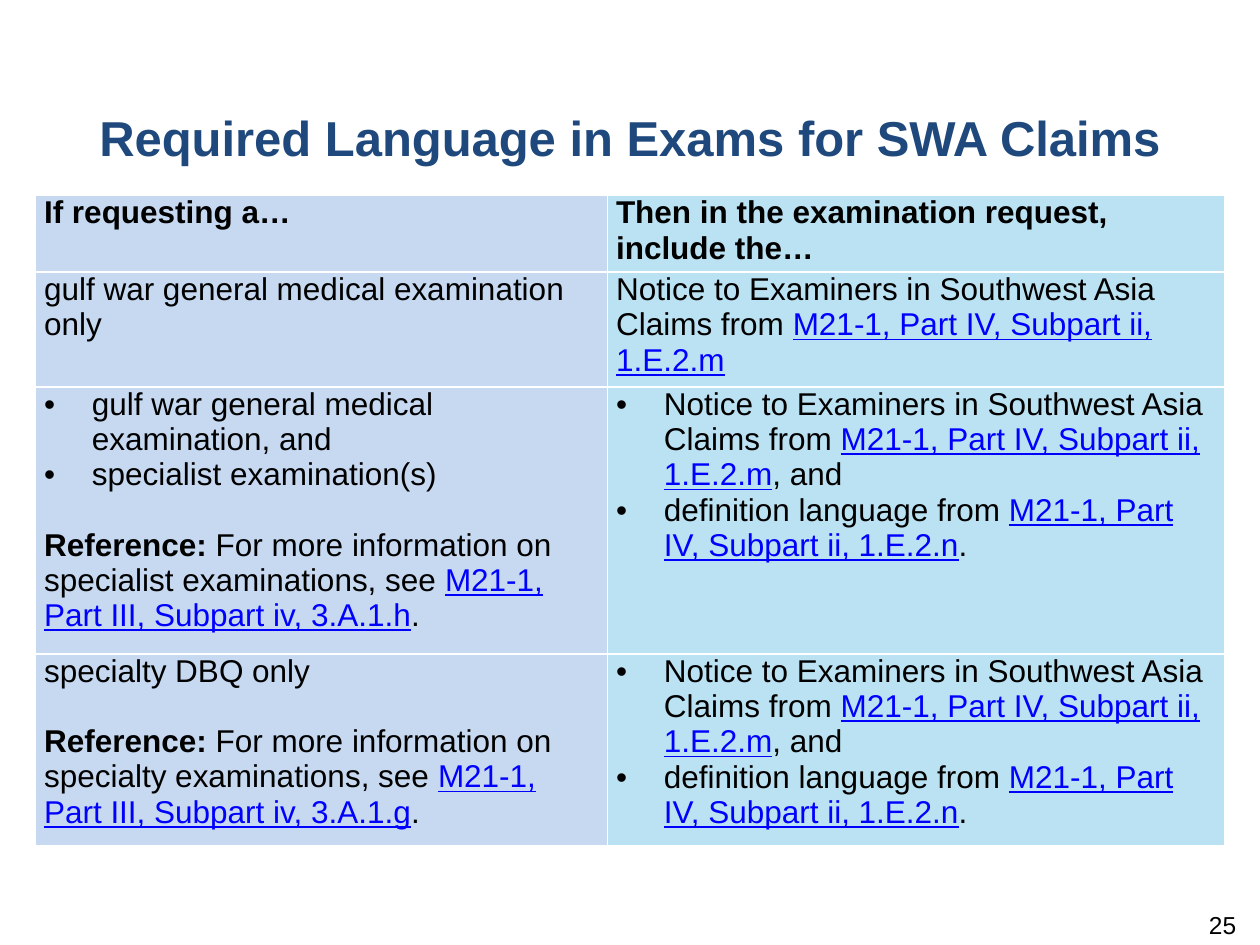
from lxml import etree
from pptx import Presentation
from pptx.dml.color import RGBColor
from pptx.enum.text import MSO_ANCHOR, PP_ALIGN
from pptx.oxml.ns import qn
from pptx.util import Inches, Pt

CENTER, RIGHT = PP_ALIGN.CENTER, PP_ALIGN.RIGHT
TOP, MIDDLE = MSO_ANCHOR.TOP, MSO_ANCHOR.MIDDLE
NAVY = RGBColor(0x1F, 0x49, 0x7D)
BLACK = RGBColor(0, 0, 0)
LINK_BLUE = RGBColor(0, 0, 0xFF)
COLUMN_FILLS = (RGBColor(0xC6, 0xD9, 0xF1), RGBColor(0xBB, 0xE2, 0xF2))
FONT = "Arial"
COLUMN_WIDTHS = (4.54, 4.9)
ROW_HEIGHTS = (0.61, 0.91, 2.12, 1.52)
PLAIN, BOLD, LINK = "plain", "bold", "link"
LINE_GAP = 20

NOTICE = [
    ("Notice to Examiners in Southwest Asia Claims from ", PLAIN),
    ("M21-1, Part IV, Subpart ii, 1.E.2.m", LINK),
]


def paragraph(*spans, bullet=False, before=0):
    return {"spans": spans, "bullet": bullet, "before": before}


def reference(topic, section):
    return paragraph(
        ("Reference: ", BOLD),
        (f"For more information on {topic} examinations, see ", PLAIN),
        (f"M21-1, Part III, Subpart iv, {section}", LINK),
        (".", PLAIN),
        before=LINE_GAP,
    )


def notice_and_definition():
    return [
        paragraph(*NOTICE, (", and", PLAIN), bullet=True),
        paragraph(
            ("definition language from ", PLAIN),
            ("M21-1, Part IV, Subpart ii, 1.E.2.n", LINK),
            (".", PLAIN),
            bullet=True,
        ),
    ]


ROWS = [
    (
        [paragraph(("If requesting a…", BOLD))],
        [paragraph(("Then in the examination request, include the…", BOLD))],
    ),
    (
        [paragraph(("gulf war general medical examination only", PLAIN))],
        [paragraph(*NOTICE)],
    ),
    (
        [
            paragraph(("gulf war general medical examination, and", PLAIN), bullet=True),
            paragraph(("specialist examination(s)", PLAIN), bullet=True),
            reference("specialist", "3.A.1.h"),
        ],
        notice_and_definition(),
    ),
    (
        [
            paragraph(("specialty DBQ only", PLAIN)),
            reference("specialty", "3.A.1.g"),
        ],
        notice_and_definition(),
    ),
]


def add_bullet(para):
    properties = para._p.get_or_add_pPr()
    properties.set("marL", str(Inches(0.38)))
    properties.set("indent", str(-Inches(0.38)))
    etree.SubElement(properties, qn("a:buFont"), typeface=FONT)
    etree.SubElement(properties, qn("a:buChar"), char="•")


def style_font(font, size, color, bold=False):
    font.name = FONT
    font.size = Pt(size)
    font.color.rgb = color
    font.bold = bold


def fill_cell(cell, color, content):
    cell.fill.solid()
    cell.fill.fore_color.rgb = color
    cell.margin_left = cell.margin_right = Inches(0.07)
    cell.margin_top = cell.margin_bottom = 0
    frame = cell.text_frame
    for index, item in enumerate(content):
        para = frame.add_paragraph() if index else frame.paragraphs[0]
        if item["bullet"]:
            add_bullet(para)
        if item["before"]:
            para.space_before = Pt(item["before"])
        for text, style in item["spans"]:
            span = para.add_run()
            span.text = text
            is_link = style == LINK
            style_font(span.font, 18, LINK_BLUE if is_link else BLACK, style == BOLD)
            span.font.underline = is_link


def add_label(page, left, top, width, height, text, size, color, bold, align, anchor):
    box = page.shapes.add_textbox(Inches(left), Inches(top), Inches(width), Inches(height))
    frame = box.text_frame
    frame.word_wrap = True
    frame.vertical_anchor = anchor
    frame.margin_top = 0
    frame.margin_bottom = 0
    para = frame.paragraphs[0]
    para.text = text
    para.alignment = align
    style_font(para.font, size, color, bold)


def add_request_table(page, left, top):
    table = page.shapes.add_table(
        len(ROWS), len(COLUMN_WIDTHS), Inches(left), Inches(top),
        Inches(sum(COLUMN_WIDTHS)), Inches(sum(ROW_HEIGHTS)),
    ).table
    for column, width in zip(table.columns, COLUMN_WIDTHS):
        column.width = Inches(width)
    for row, height, contents in zip(table.rows, ROW_HEIGHTS, ROWS):
        row.height = Inches(height)
        for cell, color, content in zip(row.cells, COLUMN_FILLS, contents):
            fill_cell(cell, color, content)


def main():
    deck = Presentation()
    deck.slide_width = Inches(10)
    deck.slide_height = Inches(7.5)
    page = deck.slides.add_slide(deck.slide_layouts[6])
    add_label(page, 0, 0.76, 10, 0.66, "Required Language in Exams for SWA Claims",
              28, NAVY, True, CENTER, MIDDLE)
    add_request_table(page, 0.28, 1.55)
    add_label(page, 7.58, 7.22, 2.33, 0.4, "25", 14, BLACK, False, RIGHT, TOP)
    deck.save("out.pptx")


if __name__ == "__main__":
    main()
